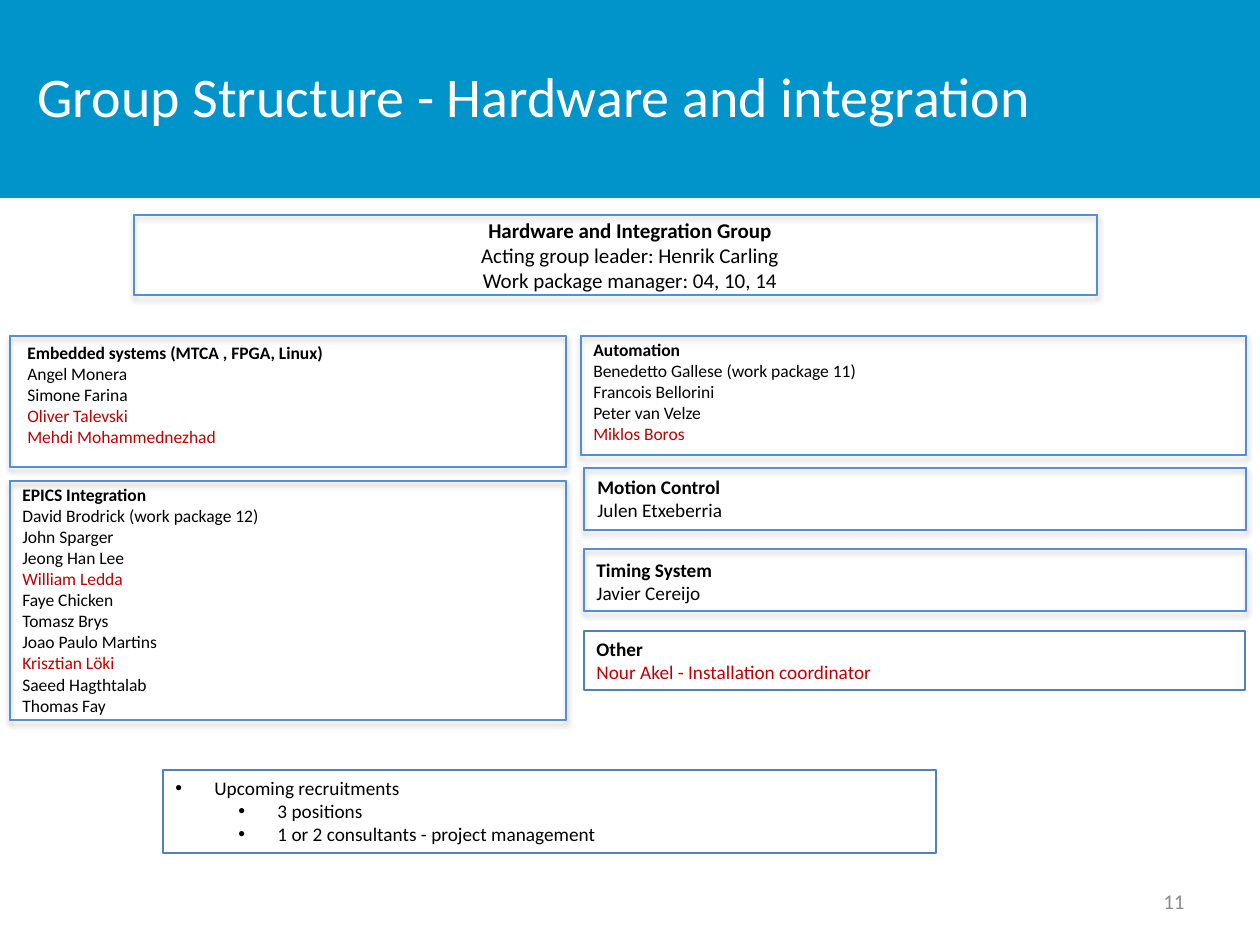
from lxml.etree import SubElement
from pptx import Presentation
from pptx.dml.color import RGBColor
from pptx.enum.shapes import MSO_SHAPE
from pptx.enum.text import MSO_ANCHOR, MSO_AUTO_SIZE, PP_ALIGN
from pptx.oxml import parse_xml
from pptx.oxml.ns import nsdecls, qn
from pptx.util import Pt

PX = 914400 / 126
COLORS = {"band": "0094CA", "white": "FFFFFF", "black": "000000", "red": "C00000",
          "gray": "8C8C8C", "fill": "3D7CC7", "frame": "558ED5", "edge": "4F81BD"}
RED = {"Oliver Talevski", "Mehdi Mohammednezhad", "William Ledda", "Krisztian Löki",
       "Miklos Boros", "Nour Akel - Installation coordinator"}
SHADOW = (f'<a:effectLst {nsdecls("a")}><a:outerShdw blurRad="39370" dist="22860" '
          'dir="5400000" rotWithShape="0"><a:srgbClr val="000000">'
          '<a:alpha val="35000"/></a:srgbClr></a:outerShdw></a:effectLst>')

prs = Presentation()
prs.slide_width, prs.slide_height = round(1260 * PX), round(945 * PX)
slide = prs.slides.add_slide(prs.slide_layouts[5])
shapes = slide.shapes


def draw(kind, box, fill=None, line=None):
    shape = shapes.add_shape(kind, *[round(v * PX) for v in box])
    shape.shadow.inherit = False
    if fill:
        shape.fill.solid()
        shape.fill.fore_color.rgb = RGBColor.from_string(COLORS[fill])
    else:
        shape.fill.background()
    if line:
        shape.line.color.rgb = RGBColor.from_string(COLORS[line])
        shape.line.width = Pt(0.75)
    else:
        shape.line.fill.background()
    return shape


def write(shape, lines, size, color="black", align=PP_ALIGN.LEFT,
          anchor=MSO_ANCHOR.TOP, head=True):
    frame = shape.text_frame
    frame.word_wrap = True
    frame.auto_size = MSO_AUTO_SIZE.NONE
    frame.vertical_anchor = anchor
    frame.text = "\n".join(lines)
    for i, para in enumerate(frame.paragraphs):
        para.alignment = align
        for run in para.runs:
            font = run.font
            font.name, font.size = "Calibri", Pt(size)
            font.bold = head and i == 0
            tint = "red" if run.text in RED else color
            font.color.rgb = RGBColor.from_string(COLORS[tint])


# Title on its band
band = draw(MSO_SHAPE.RECTANGLE, (0, 0, 1260, 198), "band")
title = shapes.title
title.left, title.top, title.width, title.height = [
    round(v * PX) for v in (25, 16, 1023, 158)]
write(title, ["Group Structure - Hardware and integration"], 32, "white",
      anchor=MSO_ANCHOR.MIDDLE, head=False)
band.element.addnext(title.element)

# Framed teams: frame box, text box, size, alignment, lines
teams = [
    ((134, 215, 963, 80), (243, 211, 774, 89), 12, PP_ALIGN.CENTER,
     ["Hardware and Integration Group", "Acting group leader: Henrik Carling",
      "Work package manager: 04, 10, 14"]),
    ((10, 336, 556, 131), (15, 336, 655, 118), 10, PP_ALIGN.LEFT,
     ["Embedded systems (MTCA , FPGA, Linux)", "Angel Monera", "Simone Farina",
      "Oliver Talevski", "Mehdi Mohammednezhad"]),
    ((10, 481, 556, 239), (10, 478, 556, 246), 10, PP_ALIGN.LEFT,
     ["EPICS Integration", "David Brodrick (work package 12)", "John Sparger",
      "Jeong Han Lee", "William Ledda", "Faye Chicken", "Tomasz Brys",
      "Joao Paulo Martins", "Krisztian Löki", "Saeed Hagthtalab", "Thomas Fay"]),
    ((581, 336, 665, 119), (581, 333, 704, 142), 10, PP_ALIGN.LEFT,
     ["Automation", "Benedetto Gallese (work package 11)", "Francois Bellorini",
      "Peter van Velze", "Miklos Boros"]),
    ((584, 468, 662, 62), (585, 469, 704, 59), 11, PP_ALIGN.LEFT,
     ["Motion Control", "Julen Etxeberria"]),
    ((584, 549, 662, 62), (584, 552, 704, 59), 11, PP_ALIGN.LEFT,
     ["Timing System", "Javier Cereijo"]),
]
for box, area, size, align, lines in teams:
    frame = draw(MSO_SHAPE.FRAME, box, "fill", "frame")
    frame.adjustments[0] = 0
    props = frame.element.spPr
    props.replace(props.find(qn("a:effectLst")), parse_xml(SHADOW))
    label = shapes.add_textbox(*[round(v * PX) for v in area])
    write(label, lines, size, align=align)

# Other
other = draw(MSO_SHAPE.RECTANGLE, (584, 631, 661, 59), line="edge")
write(other, ["Other", "Nour Akel - Installation coordinator"], 11)

# Upcoming recruitments, as a bulleted list
jobs = draw(MSO_SHAPE.RECTANGLE, (163, 770, 773, 83), line="edge")
write(jobs, ["Upcoming recruitments", "3 positions",
             "1 or 2 consultants - project management"], 11, head=False)
for para, level in zip(jobs.text_frame.paragraphs, (0, 1, 1)):
    para.level = level
    props = para._p.get_or_add_pPr()
    props.set("marL", str(round((39 + 63 * level) * PX)))
    props.set("indent", str(round(-39 * PX)))
    SubElement(props, qn("a:buFont")).set("typeface", "Arial")
    SubElement(props, qn("a:buChar")).set("char", "•")

# Page number
page = shapes.add_textbox(*[round(v * PX) for v in (903, 876, 294, 50)])
write(page, ["11"], 12, "gray", PP_ALIGN.RIGHT, MSO_ANCHOR.MIDDLE, head=False)

prs.save("out.pptx")
